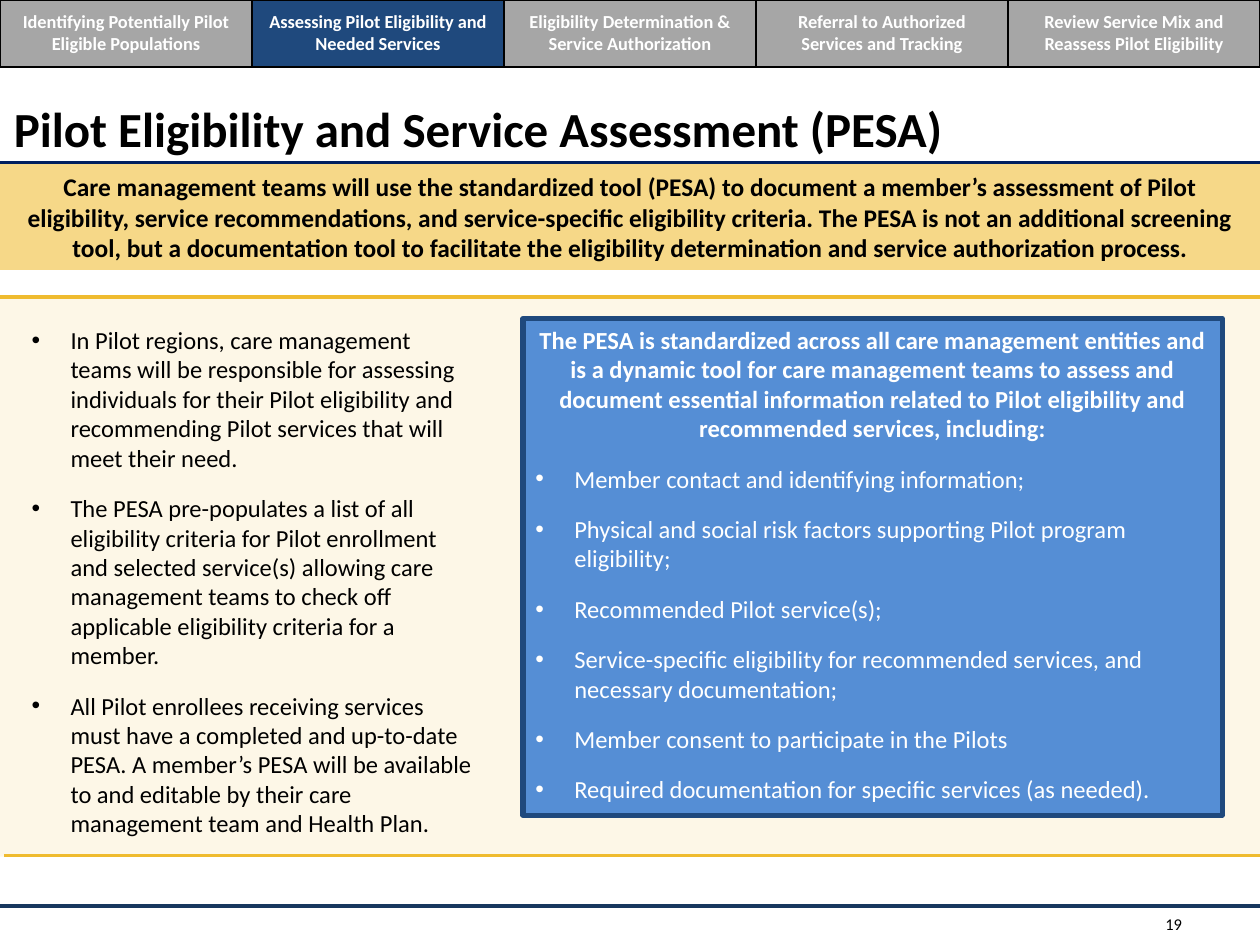
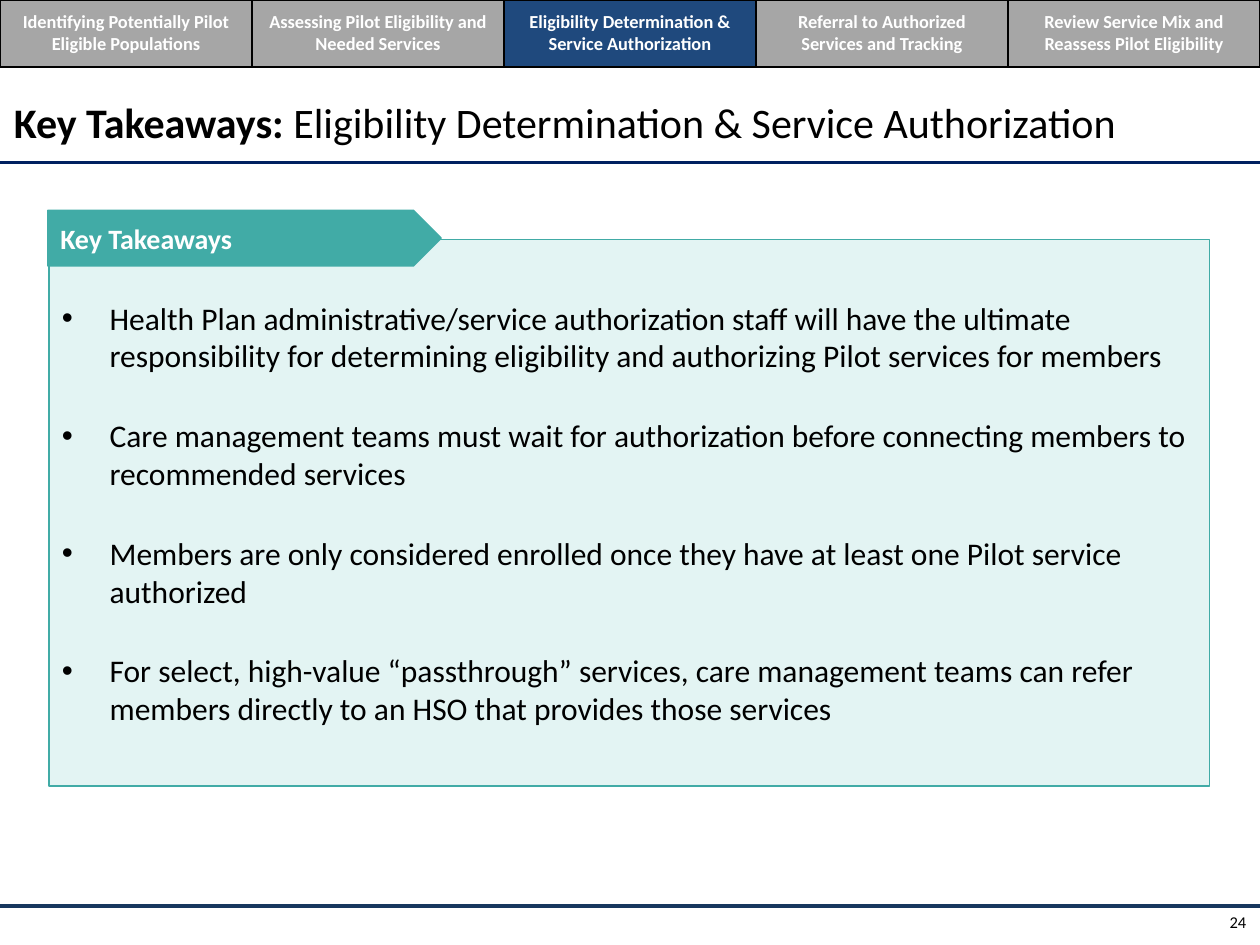
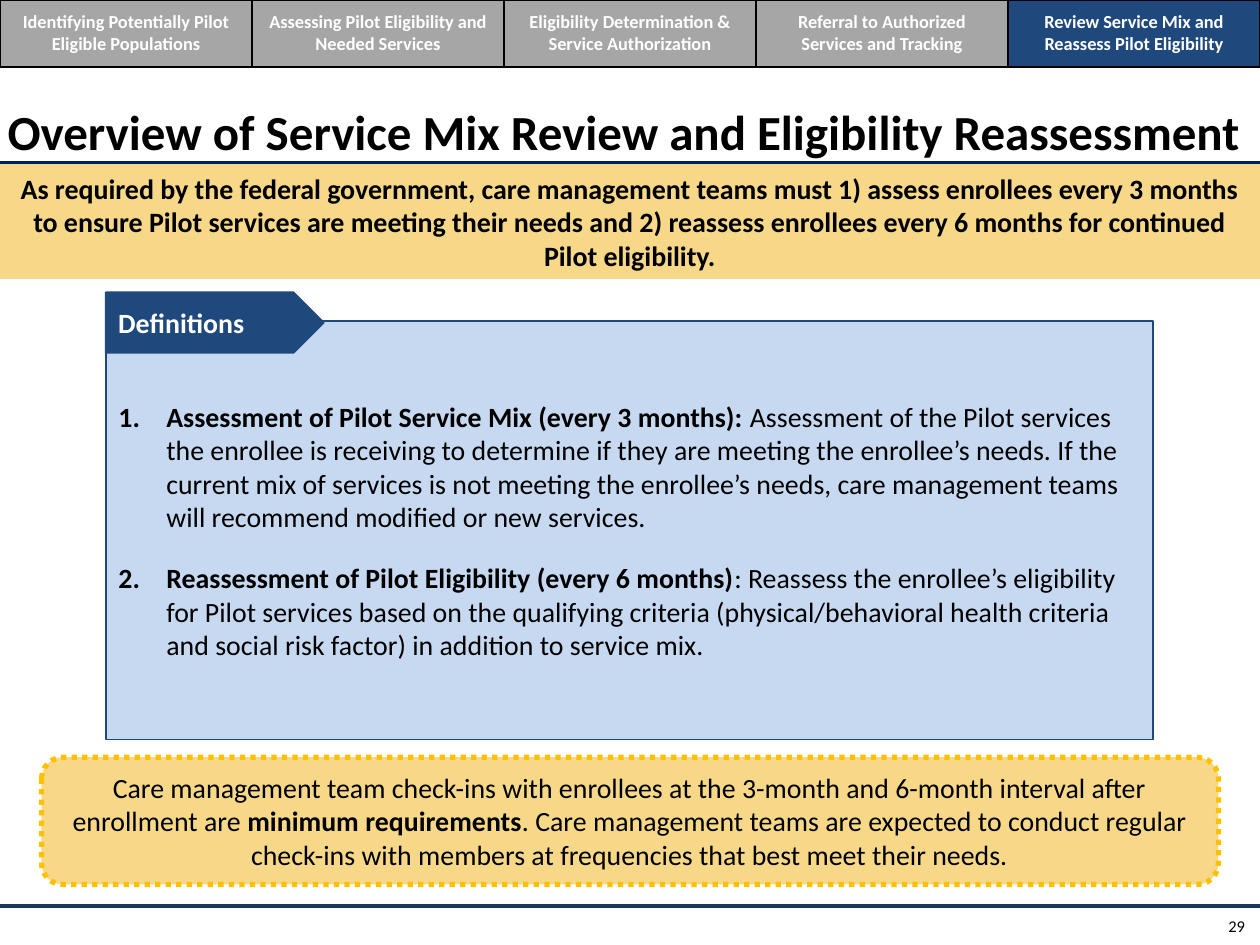
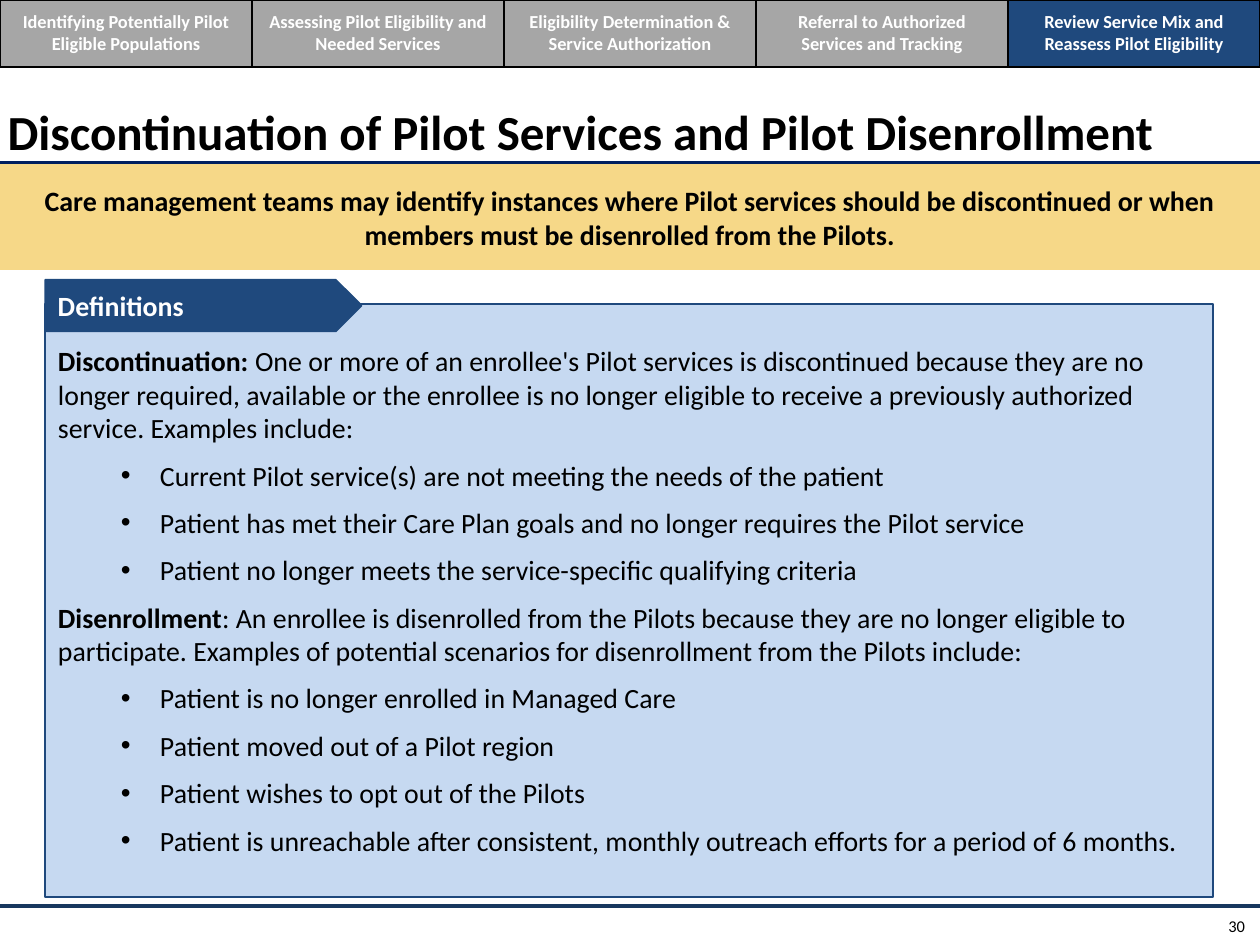
from lxml import etree
from pptx import Presentation
from pptx import util as u
from pptx.dml.color import RGBColor
from pptx.enum import dml, shapes, text
from pptx.oxml import ns

hue = RGBColor.from_string
NAVY, TEAL, GREY, GOLD, SAND, SKY = "1F497D", "41ABA6", "A6A6A6", "EFBB2F", "F6D888", "C6D9F1"
BLACK, WHITE = "000000", "FFFFFF"
LEFT, CENTER, RIGHT = text.PP_ALIGN.LEFT, text.PP_ALIGN.CENTER, text.PP_ALIGN.RIGHT
TOP, MIDDLE = text.MSO_ANCHOR.TOP, text.MSO_ANCHOR.MIDDLE
RECT = shapes.MSO_SHAPE.RECTANGLE
PENTAGON = shapes.MSO_SHAPE.PENTAGON
ROUNDED = shapes.MSO_SHAPE.ROUNDED_RECTANGLE
STRAIGHT = shapes.MSO_CONNECTOR.STRAIGHT


def paint(box, fill, line=None, width=1):
    box.shadow.inherit = False
    box.fill.solid()
    box.fill.fore_color.rgb = hue(fill)
    if line:
        box.line.color.rgb = hue(line)
        box.line.width = u.Pt(width)
    else:
        box.line.fill.background()


def write(frame, lines, size, color=BLACK, bold=False, align=LEFT, anchor=MIDDLE, after=0,
          spacing=1.0, bullet=None, indent=0.31, margins=(0.1, 0.05)):
    across, down = map(u.Inches, margins)
    settings = dict(word_wrap=True, auto_size=text.MSO_AUTO_SIZE.NONE, vertical_anchor=anchor,
                    margin_left=across, margin_right=across, margin_top=down, margin_bottom=down)
    for name, value in settings.items():
        setattr(frame, name, value)
    for index, line in enumerate(lines):
        para = frame.add_paragraph() if index else frame.paragraphs[0]
        nested = line.startswith("> ")
        layout_values = dict(alignment=align, space_before=u.Pt(0), space_after=u.Pt(after),
                             line_spacing=spacing, level=int(nested))
        for name, value in layout_values.items():
            setattr(para, name, value)
        for position, words in enumerate(line.removeprefix("> ").split("*")):
            if words:
                span = para.add_run()
                span.text = words
                span.font.color.rgb = hue(color)
                font_values = dict(name="Calibri", size=u.Pt(size), bold=bold or position % 2 == 1)
                for name, value in font_values.items():
                    setattr(span.font, name, value)
        kind = "char" if nested else bullet
        props = para._p.get_or_add_pPr()
        props.set("marL", str(u.Inches((indent + 0.5 * nested) if kind else 0)))
        props.set("indent", str(u.Inches(-indent if kind else 0)))
        if kind == "char":
            etree.SubElement(props, ns.qn("a:buFont")).set("typeface", "Arial")
            etree.SubElement(props, ns.qn("a:buChar")).set("char", "•")
        elif kind == "number":
            etree.SubElement(props, ns.qn("a:buAutoNum")).set("type", "arabicPeriod")
        else:
            etree.SubElement(props, ns.qn("a:buNone"))


steps = [
    "Identifying Potentially Pilot Eligible Populations",
    "Assessing Pilot Eligibility and Needed Services",
    "Eligibility Determination & Service Authorization",
    "Referral to Authorized Services and Tracking",
    "Review Service Mix and Reassess Pilot Eligibility",
]

contents = [
    dict(
        title="*Pilot Eligibility and Service Assessment (PESA)*", title_size=28,
        title_at=(0, 0.69, 9.42, 0.58), step=1, number="19", number_at=(8.87, 7.18),
        banner="Care management teams will use the standardized tool (PESA) to document a member’s "
               "assessment of Pilot eligibility, service recommendations, and service-specific "
               "eligibility criteria. The PESA is not an additional screening tool, but a "
               "documentation tool to facilitate the eligibility determination and service "
               "authorization process.",
        banner_size=14.5, banner_height=0.83,
        body_at=(0.15, 2.53, 3.71, 4.21),
        body_format=dict(size=14, after=12, bullet="char", anchor=TOP),
        body=[
            "In Pilot regions, care management teams will be responsible for assessing individuals "
            "for their Pilot eligibility and recommending Pilot services that will meet their need.",
            "The PESA pre-populates a list of all eligibility criteria for Pilot enrollment and "
            "selected service(s) allowing care management teams to check off applicable "
            "eligibility criteria for a member.",
            "All Pilot enrollees receiving services must have a completed and up-to-date PESA. "
            "A member’s PESA will be available to and editable by their care management team and "
            "Health Plan.",
        ],
    ),
    dict(
        title="*Key Takeaways: *Eligibility Determination & Service Authorization", title_size=24,
        title_at=(0, 0.68, 9.42, 0.58), step=2, number="24", number_at=(9.38, 7.17),
        body_at=(0.39, 1.9, 9.21, 4.34), body_fill="E3F4F3", accent=TEAL,
        body_format=dict(size=18, after=24, bullet="char", indent=0.38),
        body=[
            "Health Plan administrative/service authorization staff will have the ultimate "
            "responsibility for determining eligibility and authorizing Pilot services for members",
            "Care management teams must wait for authorization before connecting members to "
            "recommended services",
            "Members are only considered enrolled once they have at least one Pilot service "
            "authorized",
            "For select, high-value “passthrough” services, care management teams can refer "
            "members directly to an HSO that provides those services",
        ],
        tab="Key Takeaways", tab_at=(0.38, 1.67, 3.12, 0.44), tab_size=16,
    ),
    dict(
        title="*Overview of Service Mix Review and Eligibility Reassessment*", title_size=28,
        title_at=(-0.05, 0.71, 10.05, 0.58), step=4, number="29", number_at=(9.37, 7.2),
        banner="As required by the federal government, care management teams must 1) assess "
               "enrollees every 3 months to ensure Pilot services are meeting their needs and "
               "2) reassess enrollees every 6 months for continued Pilot eligibility.",
        banner_size=16, banner_height=0.9,
        body_at=(0.84, 2.55, 8.31, 3.32), body_fill=SKY, accent=NAVY,
        body_format=dict(size=15.9, after=15.9, bullet="number", indent=0.38),
        body=[
            "*Assessment of Pilot Service Mix (every 3 months): *Assessment of the Pilot services "
            "the enrollee is receiving to determine if they are meeting the enrollee’s needs. If "
            "the current mix of services is not meeting the enrollee’s needs, care management "
            "teams will recommend modified or new services.",
            "*Reassessment of Pilot Eligibility (every 6 months)*: Reassess the enrollee’s "
            "eligibility for Pilot services based on the qualifying criteria (physical/behavioral "
            "health criteria and social risk factor) in addition to service mix.",
        ],
        tab="Definitions", tab_at=(0.84, 2.32, 1.73, 0.48), tab_size=15.9,
    ),
    dict(
        title="*Discontinuation of Pilot Services and Pilot Disenrollment*", title_size=28,
        title_at=(-0.05, 0.71, 10.05, 0.58), step=4, number="30", number_at=(9.37, 7.2),
        banner="Care management teams may identify instances where Pilot services should be "
               "discontinued or when members must be disenrolled from the Pilots.",
        banner_size=16, banner_height=0.83,
        body_at=(0.36, 2.41, 9.27, 4.71), body_fill=SKY, accent=NAVY,
        body_format=dict(size=15.9, after=8),
        body=[
            "*Discontinuation: *One or more of an enrollee's Pilot services is discontinued "
            "because they are no longer required, available or the enrollee is no longer eligible "
            "to receive a previously authorized service. Examples include:",
            "> Current Pilot service(s) are not meeting the needs of the patient",
            "> Patient has met their Care Plan goals and no longer requires the Pilot service",
            "> Patient no longer meets the service-specific qualifying criteria",
            "*Disenrollment*: An enrollee is disenrolled from the Pilots because they are no "
            "longer eligible to participate. Examples of potential scenarios for disenrollment "
            "from the Pilots include:",
            "> Patient is no longer enrolled in Managed Care",
            "> Patient moved out of a Pilot region",
            "> Patient wishes to opt out of the Pilots",
            "> Patient is unreachable after consistent, monthly outreach efforts for a period of "
            "6 months.",
        ],
        tab="Definitions", tab_at=(0.36, 2.22, 2.51, 0.41), tab_size=15.9,
    ),
]

deck = Presentation()
deck.slide_width, deck.slide_height = u.Inches(10), u.Inches(7.5)
layout = deck.slide_layouts[1]
pages = [deck.slides.add_slide(layout) for content in contents]
assessment, takeaways, review, discontinuation = pages

rules = [
    (0, 7.19, "17375E", 2.25, True),
    (0, 1.29, "002060", 2, True),
    (0, 2.36, GOLD, 2.25, False),
    (0.03, 6.79, GOLD, 2.25, False),
]
for index, (left, top, color, width, shared) in enumerate(rules):
    rule = assessment.shapes.add_connector(
        STRAIGHT, *map(u.Inches, (left, top, left + 10, top)))
    rule.line.color.rgb = hue(color)
    rule.line.width = u.Pt(width)
    etree.SubElement(rule.element.spPr, ns.qn("a:effectLst"))
    if shared:
        rule.element.nvCxnSpPr.cNvPr.set("id", str(20 + index))
        layout.shapes.element.append(rule.element)

for page, content in zip(pages, contents):
    title, body = page.shapes.title, page.placeholders[1]
    for holder, place in ((title, content["title_at"]), (body, content["body_at"])):
        holder.left, holder.top, holder.width, holder.height = map(u.Inches, place)
    write(title.text_frame, [content["title"]], content["title_size"], anchor=TOP,
          spacing=1.07, margins=(0.11, 0.06))
    write(body.text_frame, content["body"], **content["body_format"])

    number = page.shapes.add_textbox(*map(u.Inches, (*content["number_at"], 0.62, 0.3)))
    write(number.text_frame, [content["number"]], 9.4, align=RIGHT, margins=(0.11, 0.06))

    if "banner" in content:
        banner = page.shapes.add_shape(
            RECT, *map(u.Inches, (0, 1.31, 10, content["banner_height"])))
        paint(banner, SAND, SAND)
        write(banner.text_frame, [content["banner"]], content["banner_size"], bold=True,
              align=CENTER, after=8.8)

    if "tab" in content:
        paint(body, content["body_fill"], content["accent"])
        tab = page.shapes.add_shape(PENTAGON, *map(u.Inches, content["tab_at"]))
        paint(tab, content["accent"], content["accent"])
        write(tab.text_frame, [content["tab"]], content["tab_size"], WHITE, bold=True)

    table = page.shapes.add_table(1, len(steps), *map(u.Inches, (0, 0, 10, 0.53))).table
    for index, step in enumerate(steps):
        cell = table.cell(0, index)
        write(cell.text_frame, [step], 10.5, WHITE, bold=True, align=CENTER)
        cell.vertical_anchor = MIDDLE
        for side in ("a:lnL", "a:lnR", "a:lnT", "a:lnB"):
            border = etree.SubElement(cell._tc.get_or_add_tcPr(), ns.qn(side), w=str(u.Pt(1)))
            border_fill = etree.SubElement(border, ns.qn("a:solidFill"))
            etree.SubElement(border_fill, ns.qn("a:srgbClr")).set("val", BLACK)
        cell.fill.solid()
        cell.fill.fore_color.rgb = hue(NAVY if index == content["step"] else GREY)

backdrop = assessment.shapes.add_shape(RECT, *map(u.Inches, (0, 2.36, 10, 4.44)))
paint(backdrop, "FDF7E7")
assessment.shapes.title.element.addprevious(backdrop.element)

tool = assessment.shapes.add_shape(RECT, *map(u.Inches, (4.15, 2.53, 5.55, 3.94)))
paint(tool, "558ED5", NAVY, 3)
write(tool.text_frame, [
    "*The PESA is standardized across all care management entities and is a dynamic tool for care "
    "management teams to assess and document essential information related to Pilot eligibility "
    "and recommended services, including:*",
    "Member contact and identifying information;",
    "Physical and social risk factors supporting Pilot program eligibility;",
    "Recommended Pilot service(s);",
    "Service-specific eligibility for recommended services, and necessary documentation;",
    "Member consent to participate in the Pilots",
    "Required documentation for specific services (as needed).",
], 14, WHITE, anchor=TOP, after=12, bullet="char")
heading = tool.text_frame.paragraphs[0]
heading.alignment = CENTER
heading_props = heading._p.get_or_add_pPr()
for name in ("marL", "indent"):
    heading_props.set(name, "0")
for tag in ("a:buFont", "a:buChar"):
    heading_props.remove(heading_props.find(ns.qn(tag)))

reminder = review.shapes.add_shape(ROUNDED, *map(u.Inches, (0.33, 6.01, 9.34, 1.01)))
paint(reminder, SAND, "FFC000", 3)
reminder.line.dash_style = dml.MSO_LINE.ROUND_DOT
write(reminder.text_frame, [
    "Care management team check-ins with enrollees at the 3-month and 6-month interval after "
    "enrollment are *minimum requirements*. Care management teams are expected to conduct regular "
    "check-ins with members at frequencies that best meet their needs.",
], 15.9, align=CENTER, after=15.9)

deck.save("out.pptx")
